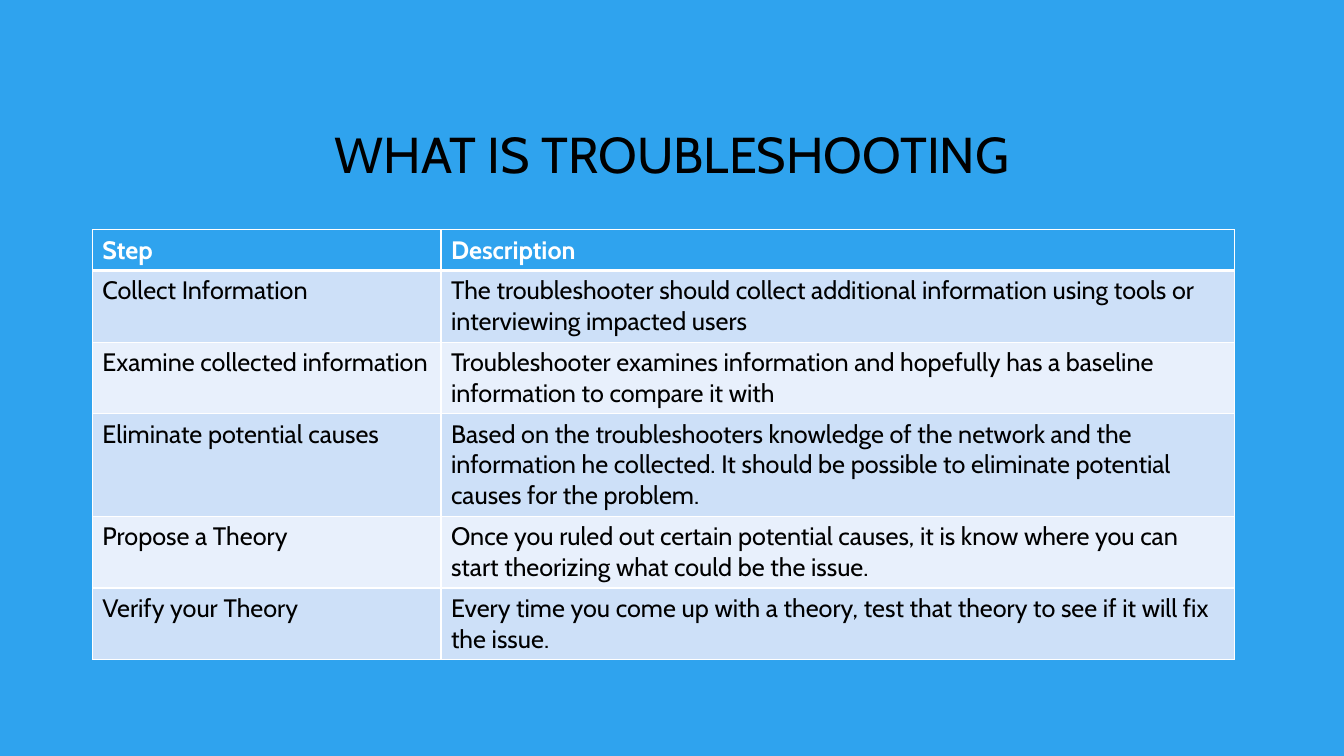
from lxml import etree
from pptx import Presentation
from pptx.dml.color import RGBColor
from pptx.enum import text
from pptx.oxml import ns
from pptx.util import Pt

COLORS = {
    "blue": "2FA3EE",
    "dark_band": "CDE0F8",
    "light_band": "E8F0FC",
    "white": "FFFFFF",
    "black": "000000",
}
STEPS = [
    ("Step", "Description", 1),
    ("Collect Information",
     "The troubleshooter should collect additional information using tools or "
     "interviewing impacted users", 2),
    ("Examine collected information",
     "Troubleshooter examines information and hopefully has a baseline "
     "information to compare it with", 2),
    ("Eliminate potential causes",
     "Based on the troubleshooters knowledge of the network and the information "
     "he collected. It should be possible to eliminate potential causes for the "
     "problem.", 3),
    ("Propose a Theory",
     "Once you ruled out certain potential causes, it is know where you can start "
     "theorizing what could be the issue.", 2),
    ("Verify your Theory",
     "Every time you come up with a theory, test that theory to see if it will "
     "fix the issue.", 2),
]
COLUMN_WIDTHS = [249, 567]
LINE_HEIGHT = 22
CELL_PADDING = 7.2


def format_font(font, color, **values):
    font.color.rgb = RGBColor.from_string(COLORS[color])
    for name, value in {"name": "Cabin", **values}.items():
        setattr(font, name, value)


def add_border(cell, side, width):
    properties = cell._tc.get_or_add_tcPr()
    line = etree.SubElement(properties, ns.qn(f"a:ln{side}"), w=str(Pt(width)))
    fill = etree.SubElement(line, ns.qn("a:solidFill"))
    etree.SubElement(fill, ns.qn("a:srgbClr"), val=COLORS["white"])


presentation = Presentation()
presentation.slide_width, presentation.slide_height = Pt(960), Pt(540)
slide = presentation.slides.add_slide(presentation.slide_layouts[5])
slide.background.fill.solid()
slide.background.fill.fore_color.rgb = RGBColor.from_string(COLORS["blue"])

title = slide.shapes.title
title.left, title.top, title.width, title.height = Pt(72), Pt(49), Pt(816), Pt(126)
title.text_frame.text = "WHAT IS TROUBLESHOOTING"
title.text_frame.word_wrap = True
title.text_frame.vertical_anchor = text.MSO_ANCHOR.MIDDLE
paragraph = title.text_frame.paragraphs[0]
paragraph.alignment = text.PP_ALIGN.CENTER
paragraph.line_spacing = 0.9
format_font(paragraph.font, "black", size=Pt(36))

heights = [CELL_PADDING + LINE_HEIGHT * lines for _, _, lines in STEPS]
table = slide.shapes.add_table(
    len(STEPS), len(COLUMN_WIDTHS),
    Pt(66), Pt(164), Pt(sum(COLUMN_WIDTHS)), Pt(sum(heights)),
).table
for column, width in zip(table.columns, COLUMN_WIDTHS):
    column.width = Pt(width)

for index, (step, description, _) in enumerate(STEPS):
    table.rows[index].height = Pt(heights[index])
    header = index == 0
    band = "blue" if header else "dark_band" if index % 2 else "light_band"
    for cell, wording in zip(table.rows[index].cells, (step, description)):
        for side in "LRTB":
            thick = (header and side == "B") or (index == 1 and side == "T")
            add_border(cell, side, 3 if thick else 1)
        cell.fill.solid()
        cell.fill.fore_color.rgb = RGBColor.from_string(COLORS[band])
        cell.text = wording
        format_font(cell.text_frame.paragraphs[0].font,
                    "white" if header else "black", size=Pt(18), bold=header)

presentation.save("out.pptx")
